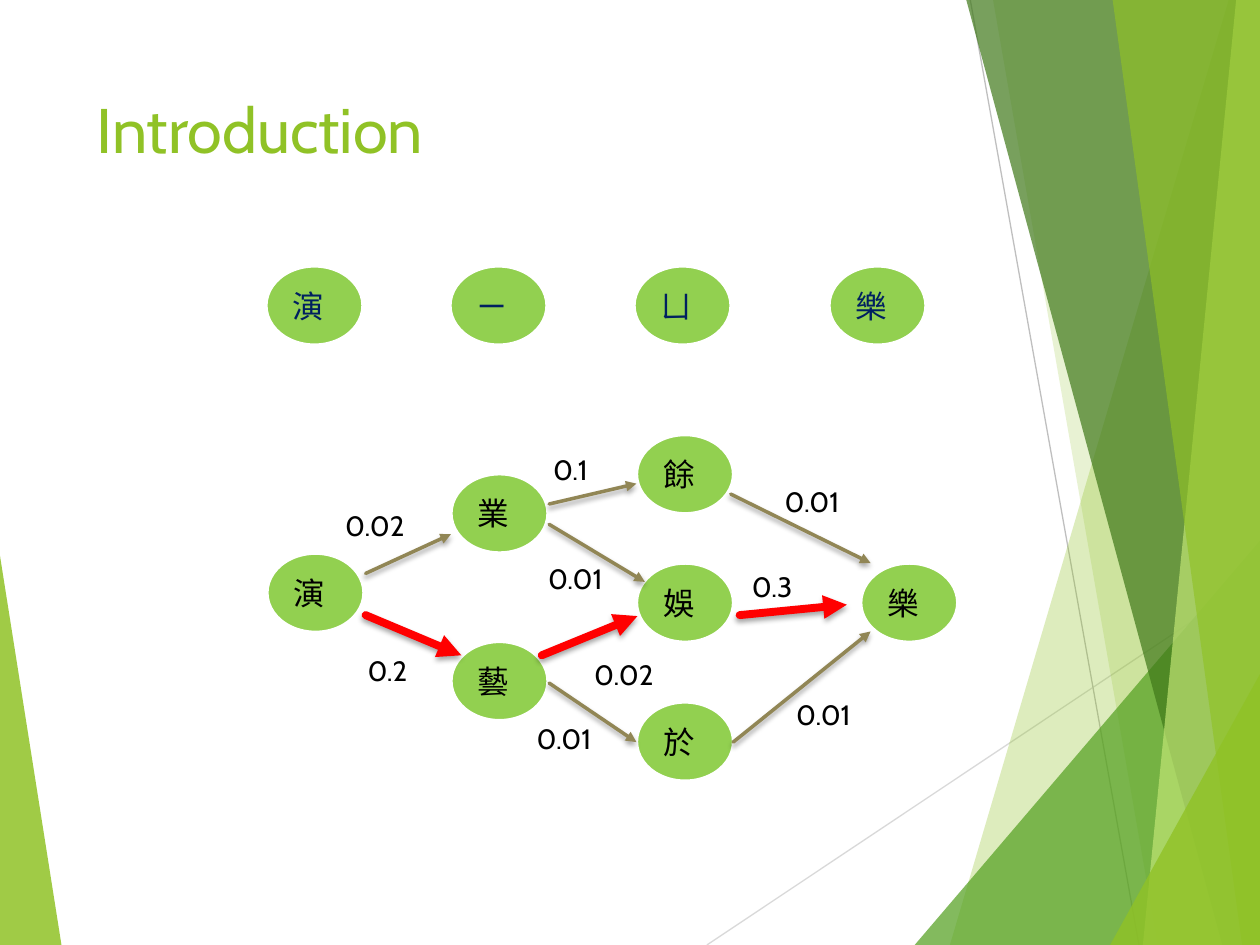
from lxml import etree
from pptx import Presentation
from pptx.dml.color import RGBColor
from pptx.enum.shapes import MSO_CONNECTOR, MSO_SHAPE
from pptx.enum.text import MSO_ANCHOR, PP_ALIGN
from pptx.oxml import parse_xml
from pptx.oxml.ns import nsdecls, qn
from pptx.util import Cm, Pt

LINE, OVAL = MSO_CONNECTOR.STRAIGHT, MSO_SHAPE.OVAL
TOP, MID, LEFT = MSO_ANCHOR.TOP, MSO_ANCHOR.MIDDLE, PP_ALIGN.LEFT
LIME = RGBColor(0x90, 0xC2, 0x26)
LEAF = RGBColor(0x54, 0xA0, 0x21)
MOSS = RGBColor(0x3F, 0x78, 0x19)
PALE = RGBColor(0xC0, 0xE4, 0x74)
NODE = RGBColor(0x92, 0xD0, 0x50)
NAVY = RGBColor(0x00, 0x20, 0x60)
TAN = RGBColor(0x91, 0x86, 0x55)
RED = RGBColor(0xFF, 0x00, 0x00)
BLACK = RGBColor(0x00, 0x00, 0x00)
WHITE = RGBColor(0xFF, 0xFF, 0xFF)
MIST = RGBColor(0xD9, 0xD9, 0xD9)
GRAY = RGBColor(0xBF, 0xBF, 0xBF)
WIDE, HIGH = 25.4, 19.05
SHADE = (
    f'<a:effectLst {nsdecls("a")}><a:outerShdw blurRad="38100" dist="25400" '
    'dir="5400000" rotWithShape="0"><a:srgbClr val="000000">'
    '<a:alpha val="35000"/></a:srgbClr></a:outerShdw></a:effectLst>'
)
PLAIN = f'<a:effectLst {nsdecls("a")}/>'


class Deck:
    """Holds the style and the current slide, and draws each kind of element."""

    def __init__(self, font):
        self.font = font
        self.prs = Presentation()
        self.prs.slide_width, self.prs.slide_height = Cm(WIDE), Cm(HIGH)
        self.slide = self.prs.slides.add_slide(self.prs.slide_layouts[6])
        self.shapes = self.slide.shapes

    def label(self, shape, text, size, color, anchor):
        frame = shape.text_frame
        frame.word_wrap = True
        frame.vertical_anchor = anchor
        par = frame.paragraphs[0]
        par.alignment = LEFT
        run = par.add_run()
        run.text = text
        run.font.name, run.font.size = self.font, Pt(size)
        run.font.color.rgb = color

    def text(self, x, y, w, h, text, size, color):
        box = self.shapes.add_textbox(Cm(x), Cm(y), Cm(w), Cm(h))
        self.label(box, text, size, color, TOP)

    def node(self, x, y, text, color):
        oval = self.shapes.add_shape(OVAL, Cm(x), Cm(y), Cm(1.96), Cm(1.6))
        oval.shadow.inherit = False
        oval.fill.solid()
        oval.fill.fore_color.rgb = NODE
        oval.line.color.rgb, oval.line.width = WHITE, Pt(2)
        self.label(oval, text, 18, color, MID)

    def line(self, ends, color, width, arrow=False):
        rule = self.shapes.add_connector(LINE, *(Cm(n) for n in ends))
        rule.line.color.rgb, rule.line.width = color, Pt(width)
        props = rule.element.spPr
        if arrow:
            stroke = props.find(qn("a:ln"))
            stroke.set("cap", "rnd")
            etree.SubElement(stroke, qn("a:tailEnd"), type="triangle")
        props.append(parse_xml(SHADE if arrow else PLAIN))

    def facet(self, points, color, alpha):
        first, *rest = [(Cm(x), Cm(y)) for x, y in points]
        form = self.shapes.build_freeform(*first)
        form.add_line_segments(rest)
        shape = form.convert_to_shape()
        shape.shadow.inherit = False
        shape.fill.solid()
        shape.fill.fore_color.rgb = color
        tint = shape.element.spPr.find(".//" + qn("a:srgbClr"))
        etree.SubElement(tint, qn("a:alpha"), val=str(alpha * 1000))
        shape.line.fill.background()

    def strip(self, top, base, color, alpha):
        self.facet([(top, 0), (base, HIGH), (WIDE, HIGH), (WIDE, 0)], color, alpha)

    def wedge(self, base, peak, color, alpha):
        self.facet([(base, HIGH), (WIDE, peak), (WIDE, HIGH)], color, alpha)


def main():
    deck = Deck("Cabin")
    deck.facet([(0, 11.2), (1.24, HIGH), (0, HIGH)], LIME, 85)
    deck.line((14.25, HIGH, WIDE, 11.61), MIST, 0.75)
    deck.line((19.56, 0, 22.96, HIGH), GRAY, 0.75)
    deck.strip(24.77, 19.15, LIME, 30)
    deck.strip(20.02, 23.34, LIME, 20)
    deck.wedge(18.44, 10.9, LEAF, 72)
    deck.strip(19.48, 24.64, MOSS, 70)
    deck.strip(24.92, 23.04, PALE, 70)
    deck.strip(22.43, 25.04, LIME, 65)
    deck.wedge(22.38, 13.59, LIME, 80)

    deck.text(1.7, 1.7, 17.63, 3.66, "Introduction", 36, LIME)
    for x, word in zip((5.36, 9.07, 12.78, 16.71), "演ㄧㄩ樂"):
        deck.node(x, 5.36, word, NAVY)

    nodes = (
        (5.38, 11.15, "演"), (9.09, 9.55, "業"), (9.09, 12.93, "藝"),
        (12.83, 8.76, "餘"), (12.83, 11.35, "娛"), (12.83, 14.15, "於"),
        (17.35, 11.35, "樂"),
    )
    for x, y, word in nodes:
        deck.node(x, y, word, BLACK)

    edges = (
        (7.37, 11.56, 9.09, 10.77), (11.07, 10.16, 12.83, 9.75),
        (11.07, 10.57, 13, 11.73), (11.07, 13.77, 12.83, 14.96),
        (14.73, 9.96, 17.55, 11.35), (14.78, 14.96, 17.55, 12.73),
    )
    for ends in edges:
        deck.line(ends, TAN, 2, True)

    costs = (
        (6.71, 10.13, 1.9, "0.02"), (7.16, 13.06, 1.55, "0.2"),
        (10.9, 8.99, 1.52, "0.1"), (10.8, 11.2, 1.96, "0.01"),
        (11.73, 13.13, 2.39, "0.02"), (10.57, 14.43, 1.78, "0.01"),
        (15.57, 9.65, 1.98, "0.01"), (14.91, 11.35, 1.5, "0.3"),
        (15.8, 13.94, 1.93, "0.01"),
    )
    for x, y, w, cost in costs:
        deck.text(x, y, w, 0.94, cost, 16, BLACK)

    best = (
        (7.37, 12.4, 9.3, 13.21), (10.92, 13.21, 12.85, 12.42),
        (14.91, 12.4, 17.07, 12.19),
    )
    for ends in best:
        deck.line(ends, RED, 4.5, True)
    deck.prs.save("out.pptx")


if __name__ == "__main__":
    main()
